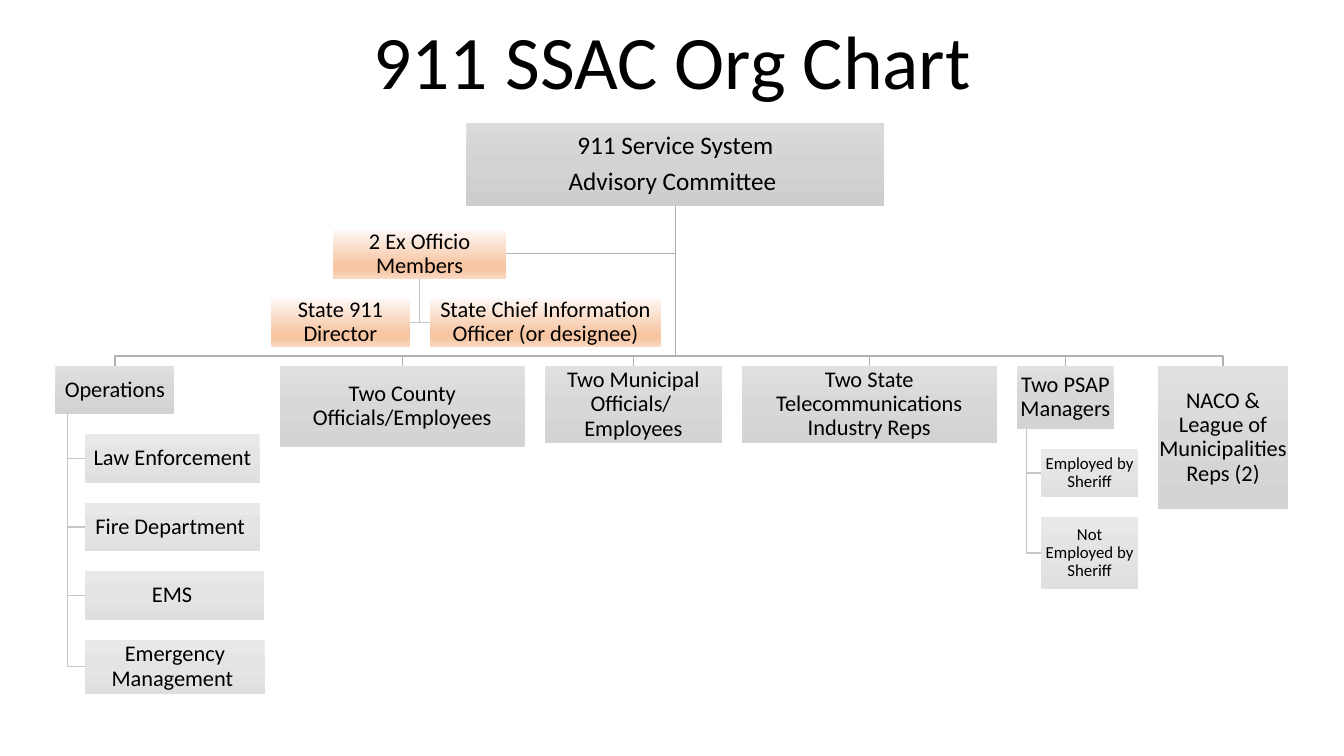
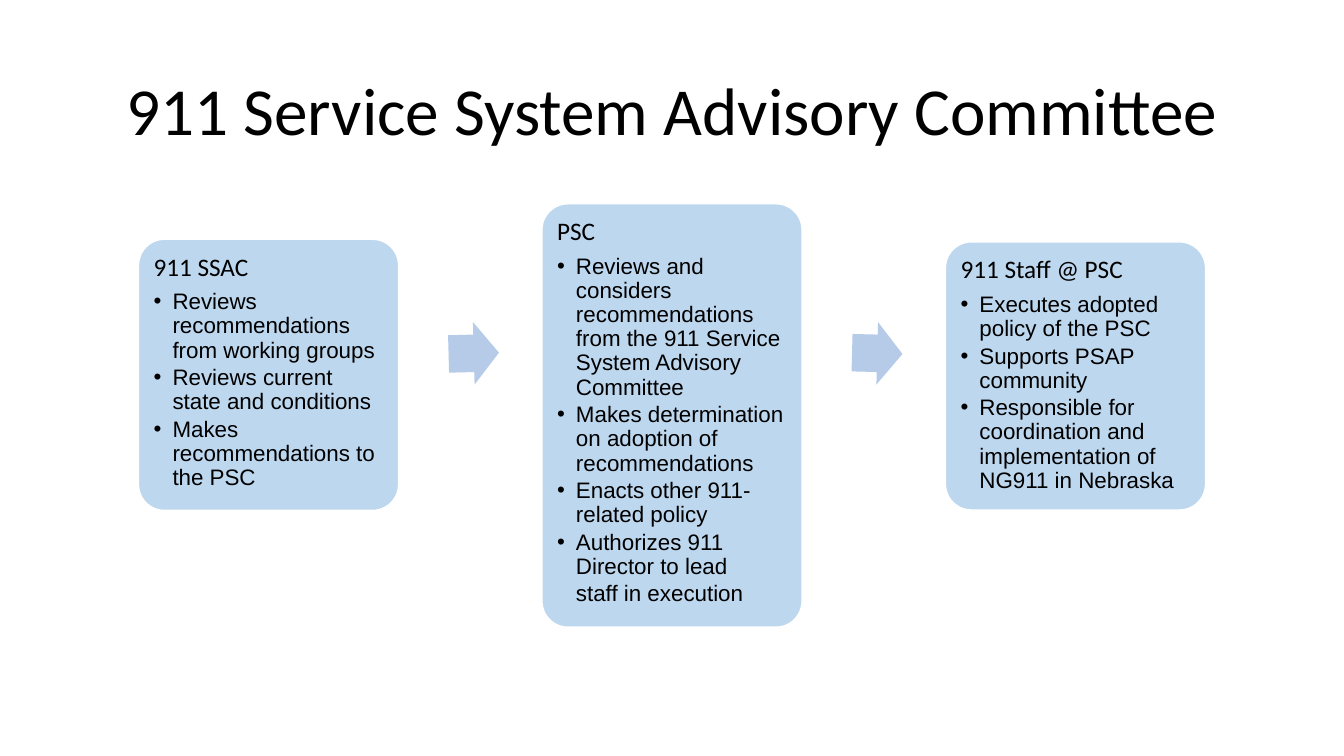
"""Build the 911 SSAC org chart and the committee process slide."""
from copy import deepcopy

from lxml import etree
from pptx import Presentation
from pptx.dml.color import RGBColor
from pptx.enum.shapes import MSO_SHAPE
from pptx.enum.text import MSO_ANCHOR, MSO_AUTO_SIZE, PP_ALIGN
from pptx.oxml.ns import qn
from pptx.util import Pt

RECT = MSO_SHAPE.RECTANGLE
ROUNDED = MSO_SHAPE.ROUNDED_RECTANGLE
RIGHT_ARROW = MSO_SHAPE.RIGHT_ARROW
CENTER = PP_ALIGN.CENTER
LEFT = PP_ALIGN.LEFT
TOP = MSO_ANCHOR.TOP
MIDDLE = MSO_ANCHOR.MIDDLE
NO_AUTOFIT = MSO_AUTO_SIZE.NONE

BLACK = RGBColor(0x00, 0x00, 0x00)
WHITE = RGBColor(0xFF, 0xFF, 0xFF)
TRUNK_GRAY = RGBColor(0xB1, 0xB1, 0xB1)
BRANCH_GRAY = RGBColor(0xC6, 0xC6, 0xC6)
CARD_BLUE = RGBColor(0xBD, 0xD7, 0xEE)
ARROW_BLUE = RGBColor(0xB5, 0xCB, 0xE7)
PEACH = RGBColor(0xF7, 0xC5, 0xA2)

COMMITTEE_FILL = [(0, RGBColor(0xDB, 0xDB, 0xDB)), (0.5, RGBColor(0xD3, 0xD3, 0xD3)),
                  (1, RGBColor(0xCD, 0xCD, 0xCD))]
GROUP_FILL = [(0, RGBColor(0xE0, 0xE0, 0xE0)), (0.5, RGBColor(0xD8, 0xD8, 0xD8)),
              (1, RGBColor(0xD3, 0xD3, 0xD3))]
MEMBER_FILL = [(0, RGBColor(0xE9, 0xE9, 0xE9)), (0.5, RGBColor(0xE4, 0xE4, 0xE4)),
               (1, RGBColor(0xDF, 0xDF, 0xDF))]
EX_OFFICIO_FILL = [(0, RGBColor(0xFE, 0xF8, 0xF5)), (0.74, PEACH), (0.83, PEACH),
                   (1, RGBColor(0xFA, 0xD8, 0xC1))]

HEADING_FONT = "Calibri"
BULLET_FONT = "Arial"

prs = Presentation()
prs.slide_width, prs.slide_height = Pt(960), Pt(540)
title_only = prs.slide_layouts[5]

titles = [
    ("911 SSAC Org Chart", 54, (84.2, 4.6, 792, 83.5)),
    ("911 Service System Advisory Committee", 48, (66.2, 28.8, 828, 104.4)),
]
for words, size, place in titles:
    title = prs.slides.add_slide(title_only).shapes.title
    title.left, title.top, title.width, title.height = map(Pt, place)
    title.text_frame.text = words
    title.text_frame.auto_size = NO_AUTOFIT
    title.text_frame.vertical_anchor = MIDDLE
    heading = title.text_frame.paragraphs[0]
    heading.alignment = CENTER
    heading.line_spacing = 0.9
    heading.font.size = Pt(size)
    heading.font.name = HEADING_FONT
    heading.font.color.rgb = BLACK
org_slide, process_slide = prs.slides


def add_elbow(color, start, *corners):
    builder = org_slide.shapes.build_freeform(Pt(start[0]), Pt(start[1]))
    builder.add_line_segments([(Pt(x), Pt(y)) for x, y in corners], close=False)
    elbow = builder.convert_to_shape()
    elbow.shadow.inherit = False
    elbow.fill.background()
    elbow.line.color.rgb = color
    elbow.line.width = Pt(1)


def add_box(words, left, top, width, height, stops, size=16):
    box = org_slide.shapes.add_shape(RECT, Pt(left), Pt(top), Pt(width), Pt(height))
    box.shadow.inherit = False
    box.line.fill.background()
    box.fill.gradient()
    box.fill.gradient_angle = 270
    stop_list = box._element.spPr.find(qn("a:gradFill")).find(qn("a:gsLst"))
    for _ in stops[2:]:
        stop_list.append(deepcopy(stop_list[0]))
    for stop, (position, color) in zip(box.fill.gradient_stops, stops):
        stop.position = position
        stop.color.rgb = color
    frame = box.text_frame
    frame.text = words
    frame.word_wrap = True
    frame.vertical_anchor = MIDDLE
    frame.margin_left = frame.margin_right = Pt(0.7)
    frame.margin_top = frame.margin_bottom = Pt(0.7)
    for paragraph in frame.paragraphs:
        paragraph.alignment = CENTER
        paragraph.line_spacing = 0.9
        paragraph.font.size = Pt(size)
        paragraph.font.name = HEADING_FONT
        paragraph.font.color.rgb = BLACK
    for paragraph in frame.paragraphs[:-1]:
        paragraph.space_after = Pt(0.35 * size)


GAP = 14.3
ROW_HEIGHT = 34.6
TRUNK_X = 482.4
COMMITTEE_TOP, COMMITTEE_HEIGHT = 87.6, 59.8
TRUNK_START = (TRUNK_X, COMMITTEE_TOP + COMMITTEE_HEIGHT)
GROUP_TOP = 261.4
BAR_Y = GROUP_TOP - GAP / 2

groups = [
    ("Operations", 39.6, 84.9, ROW_HEIGHT, 16, [
        ("Law Enforcement", 124.6, ROW_HEIGHT),
        ("Fire Department ", 125.3, ROW_HEIGHT),
        ("EMS ", 127.8, ROW_HEIGHT),
        ("Emergency Management ", 128.2, 38.4)]),
    ("Two County Officials/Employees", 199.8, 175, 57.6, 16, []),
    ("Two Municipal Officials/ \vEmployees", 389.3, 126.3, 55.4, 16, []),
    ("Two State Telecommunications Industry Reps", 529.7, 182.4, 55, 16, []),
    ("Two PSAP Managers", 726.5, 69.1, 44.8, 12, [
        ("Employed by Sheriff", 69.1, ROW_HEIGHT),
        ("Not Employed by Sheriff", 69.1, 51.1)]),
    ("NACO & League of Municipalities Reps (2)", 827, 93.2, 102.4, 16, []),
]

EX_LEFT, EX_TOP, EX_WIDTH = 237.8, 164, 123.8
EX_CENTER = EX_LEFT + EX_WIDTH / 2
EX_MIDDLE = EX_TOP + ROW_HEIGHT / 2
OFFICER_TOP = EX_TOP + ROW_HEIGHT + GAP
OFFICER_MIDDLE = OFFICER_TOP + ROW_HEIGHT / 2
DIRECTOR_WIDTH, CIO_WIDTH = 98.8, 165.6
DIRECTOR_RIGHT, CIO_LEFT = EX_CENTER - GAP / 2, EX_CENTER + GAP / 2

for officer_x in (CIO_LEFT, DIRECTOR_RIGHT):
    add_elbow(BRANCH_GRAY, (EX_CENTER, EX_TOP + ROW_HEIGHT),
              (EX_CENTER, OFFICER_MIDDLE), (officer_x, OFFICER_MIDDLE))
add_elbow(TRUNK_GRAY, TRUNK_START, (TRUNK_X, EX_MIDDLE), (EX_LEFT + EX_WIDTH, EX_MIDDLE))

add_box("911 Service System\nAdvisory Committee ", 333.2, COMMITTEE_TOP,
        298.4, COMMITTEE_HEIGHT, COMMITTEE_FILL, 18)
add_box("2 Ex Officio Members", EX_LEFT, EX_TOP, EX_WIDTH, ROW_HEIGHT, EX_OFFICIO_FILL)
add_box("State 911 Director", DIRECTOR_RIGHT - DIRECTOR_WIDTH, OFFICER_TOP,
        DIRECTOR_WIDTH, ROW_HEIGHT, EX_OFFICIO_FILL)
add_box("State Chief Information Officer (or designee)", CIO_LEFT, OFFICER_TOP,
        CIO_WIDTH, ROW_HEIGHT, EX_OFFICIO_FILL)

for name, left, width, height, member_size, members in groups:
    center = left + width / 2
    add_elbow(TRUNK_GRAY, TRUNK_START, (TRUNK_X, BAR_Y), (center, BAR_Y),
              (center, GROUP_TOP))
    add_box(name, left, GROUP_TOP, width, height, GROUP_FILL)
    spine_x, member_left = left + 0.1 * width, left + 0.25 * width
    group_bottom = GROUP_TOP + height
    member_top = group_bottom + GAP
    for member, member_width, member_height in members:
        member_middle = member_top + member_height / 2
        add_elbow(BRANCH_GRAY, (spine_x, group_bottom), (spine_x, member_middle),
                  (member_left, member_middle))
        add_box(member, member_left, member_top, member_width, member_height,
                MEMBER_FILL, member_size)
        member_top += member_height + GAP

CARD_LEFT, CARD_STEP, CARD_WIDTH = 98.9, 288.2, 185.8
CONTINUATION = "staff in execution"
cards = [
    (170.9, 193.7, "911 SSAC", [
        "Reviews recommendations from working groups",
        "Reviews current state and conditions",
        "Makes recommendations to the PSC"]),
    (145.6, 302.4, "PSC", [
        "Reviews and considers recommendations from the 911 Service System "
        "Advisory Committee",
        "Makes determination on adoption of recommendations",
        "Enacts other 911-related policy",
        "Authorizes 911 Director to lead",
        CONTINUATION]),
    (172.8, 191.5, "911 Staff @ PSC", [
        "Executes adopted policy of the PSC",
        "Supports PSAP community",
        "Responsible for coordination and implementation of NG911 in Nebraska"]),
]
for index, (top, height, body, duties) in enumerate(cards):
    card = process_slide.shapes.add_shape(
        ROUNDED, Pt(CARD_LEFT + index * CARD_STEP), Pt(top), Pt(CARD_WIDTH), Pt(height))
    card.adjustments[0] = 0.1
    card.shadow.inherit = False
    card.fill.solid()
    card.fill.fore_color.rgb = CARD_BLUE
    card.line.color.rgb = WHITE
    card.line.width = Pt(1)
    frame = card.text_frame
    frame.text = "\n".join([body, *duties])
    frame.word_wrap = True
    frame.vertical_anchor = TOP
    frame.margin_left = frame.margin_right = Pt(5.4)
    frame.margin_top = frame.margin_bottom = Pt(5.4)
    for paragraph in frame.paragraphs:
        paragraph.alignment = LEFT
        paragraph.line_spacing = 0.9
        paragraph.space_after = Pt(2.4)
        paragraph.font.size = Pt(16)
        paragraph.font.name = BULLET_FONT
        paragraph.font.color.rgb = BLACK
    card_heading, *duty_lines = frame.paragraphs
    card_heading.space_after = Pt(6.3)
    card_heading.font.size = Pt(18)
    card_heading.font.name = HEADING_FONT
    for duty in duty_lines:
        duty.level = 1
        properties = duty._p.get_or_add_pPr()
        properties.set("marL", str(Pt(13.5)))
        if duty.text == CONTINUATION:
            properties.set("indent", "0")
            continue
        properties.set("indent", str(-Pt(13.5)))
        bullet_font = etree.Element(qn("a:buFont"), typeface=BULLET_FONT)
        properties.find(qn("a:spcAft")).addnext(bullet_font)
        bullet_font.addnext(etree.Element(qn("a:buChar"), char="•"))

for index, tilt in enumerate([-1.5, 1.5]):
    arrow = process_slide.shapes.add_shape(
        RIGHT_ARROW, Pt(320.4 + index * CARD_STEP), Pt(230.1), Pt(36), Pt(44.6))
    arrow.adjustments[0] = 0.6
    arrow.adjustments[1] = 0.5
    arrow.rotation = tilt
    arrow.shadow.inherit = False
    arrow.fill.solid()
    arrow.fill.fore_color.rgb = ARROW_BLUE
    arrow.line.fill.background()

prs.save("out.pptx")
